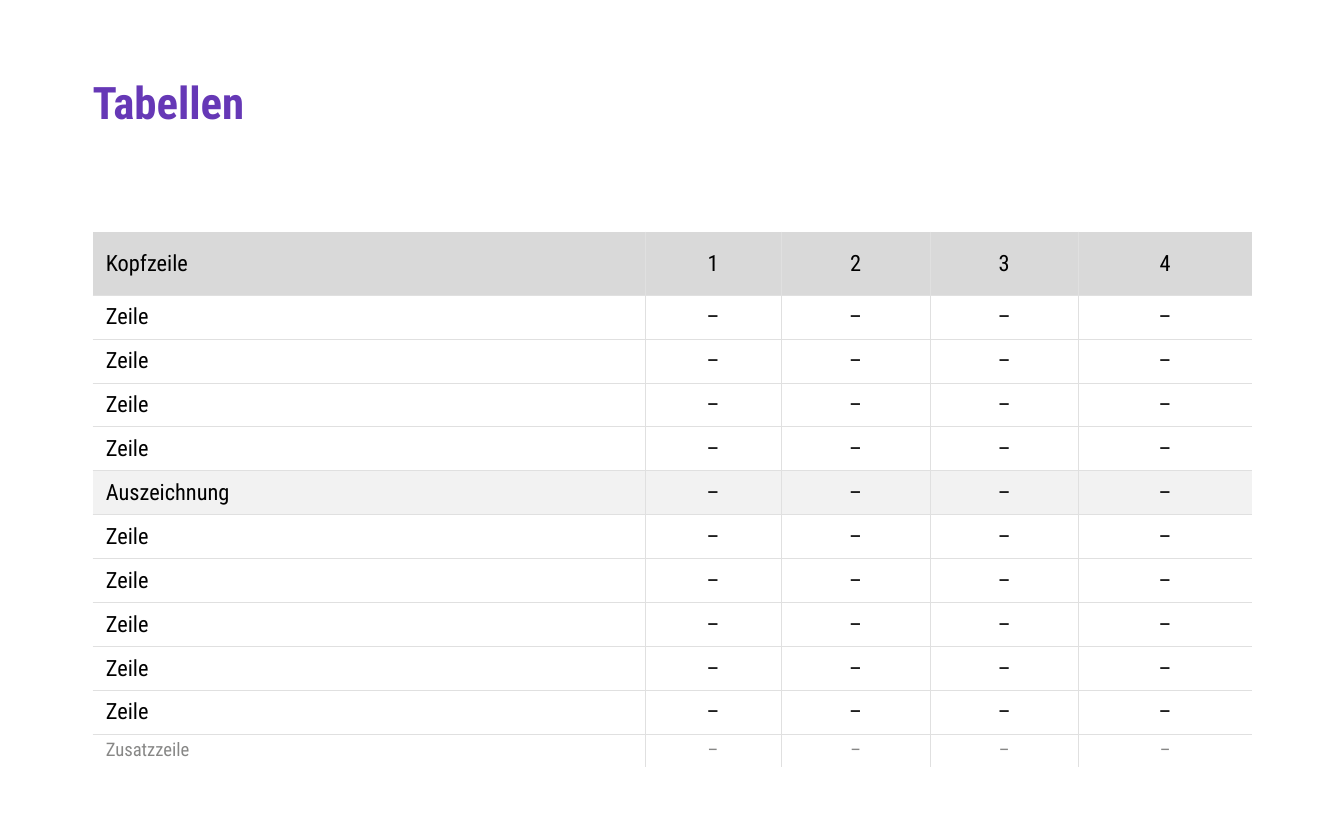
from dataclasses import dataclass

from lxml import etree
from pptx import Presentation
from pptx.dml.color import RGBColor
from pptx.enum.text import MSO_ANCHOR, PP_ALIGN
from pptx.oxml.ns import qn
from pptx.util import Cm, Pt

MIDDLE = MSO_ANCHOR.MIDDLE
LEFT, CENTER = PP_ALIGN.LEFT, PP_ALIGN.CENTER
TITLE_ONLY = 5


@dataclass(frozen=True)
class Theme:
    font: str = "Roboto Condensed"
    accent: str = "6638B6"
    text: str = "000000"
    muted: str = "878786"
    header_fill: str = "D9D9D9"
    highlight_fill: str = "F2F2F2"
    grid: str = "E0E0E0"
    title_size: float = 24
    body_size: float = 12
    note_size: float = 10
    grid_width: float = 0.5


@dataclass(frozen=True)
class RowStyle:
    height: float
    size: float
    color: str
    fill: str | None = None
    inset: float = 0


class SlideBuilder:
    def __init__(self, slide, theme):
        self.slide = slide
        self.theme = theme

    def format_runs(self, paragraph, size, color, bold=False):
        for run in paragraph.runs:
            run.font.name = self.theme.font
            run.font.size = Pt(size)
            run.font.bold = bold
            run.font.color.rgb = RGBColor.from_string(color)

    def title(self, text, left, top, width, height):
        heading = self.slide.shapes.title
        heading.left, heading.top = Cm(left), Cm(top)
        heading.width, heading.height = Cm(width), Cm(height)
        frame = heading.text_frame
        frame.text = text
        frame.word_wrap = True
        frame.vertical_anchor = MIDDLE
        frame.margin_left = frame.margin_right = 0
        frame.margin_top = frame.margin_bottom = 0
        paragraph = frame.paragraphs[0]
        paragraph.alignment = LEFT
        paragraph.line_spacing = 0.9
        self.format_runs(paragraph, self.theme.title_size, self.theme.accent, True)

    def borders(self, cell, visible):
        """Draw the grid on the sides whose flag in visible is true."""
        properties = cell._tc.get_or_add_tcPr()
        for side, shown in visible.items():
            line = etree.SubElement(properties, qn(f"a:ln{side}"))
            line.set("w", str(Pt(self.theme.grid_width)))
            if shown:
                fill = etree.SubElement(line, qn("a:solidFill"))
                etree.SubElement(fill, qn("a:srgbClr"), val=self.theme.grid)
            else:
                etree.SubElement(line, qn("a:noFill"))

    def cell(self, cell, text, style, alignment):
        cell.vertical_anchor = MIDDLE
        cell.margin_left = cell.margin_right = Cm(0.25)
        cell.margin_top = cell.margin_bottom = Cm(style.inset)
        if style.fill:
            cell.fill.solid()
            cell.fill.fore_color.rgb = RGBColor.from_string(style.fill)
        else:
            cell.fill.background()
        cell.text_frame.text = text
        paragraph = cell.text_frame.paragraphs[0]
        paragraph.alignment = alignment
        self.format_runs(paragraph, style.size, style.color)

    def table(self, rows, left, top, column_widths):
        """Build a table from (texts, RowStyle) pairs with inner grid lines only."""
        last_row, last_column = len(rows) - 1, len(column_widths) - 1
        height = sum(style.height for _, style in rows)
        table = self.slide.shapes.add_table(
            len(rows), len(column_widths),
            Cm(left), Cm(top), Cm(sum(column_widths)), Cm(height),
        ).table
        table.first_row = table.horz_banding = False
        for column, width in zip(table.columns, column_widths):
            column.width = Cm(width)
        for r, (texts, style) in enumerate(rows):
            table.rows[r].height = Cm(style.height)
            for c, text in enumerate(texts):
                cell = table.cell(r, c)
                self.borders(cell, {"L": c > 0, "R": c < last_column,
                                    "T": r > 0, "B": r < last_row})
                self.cell(cell, text, style, CENTER if c else LEFT)


def main():
    theme = Theme()
    presentation = Presentation()
    presentation.slide_width, presentation.slide_height = Cm(25.4), Cm(15.88)
    slide = presentation.slides.add_slide(presentation.slide_layouts[TITLE_ONLY])
    builder = SlideBuilder(slide, theme)

    header = RowStyle(1.2, theme.body_size, theme.text, theme.header_fill, 0.1)
    body = RowStyle(0.83, theme.body_size, theme.text)
    highlight = RowStyle(0.83, theme.body_size, theme.text, theme.highlight_fill)
    note = RowStyle(0.6, theme.note_size, theme.muted, inset=0.1)

    dashes = ["–"] * 4
    plain_row = (["Zeile", *dashes], body)
    rows = [
        (["Kopfzeile", "1", "2", "3", "4"], header),
        *[plain_row] * 4,
        (["Auszeichnung", *dashes], highlight),
        *[plain_row] * 5,
        (["Zusatzzeile", *dashes], note),
    ]

    builder.title("Tabellen", 1.75, 1.58, 21.9, 0.82)
    builder.table(rows, 1.75, 4.38, [10.44, 2.57, 2.82, 2.8, 3.28])
    presentation.save("out.pptx")


if __name__ == "__main__":
    main()
